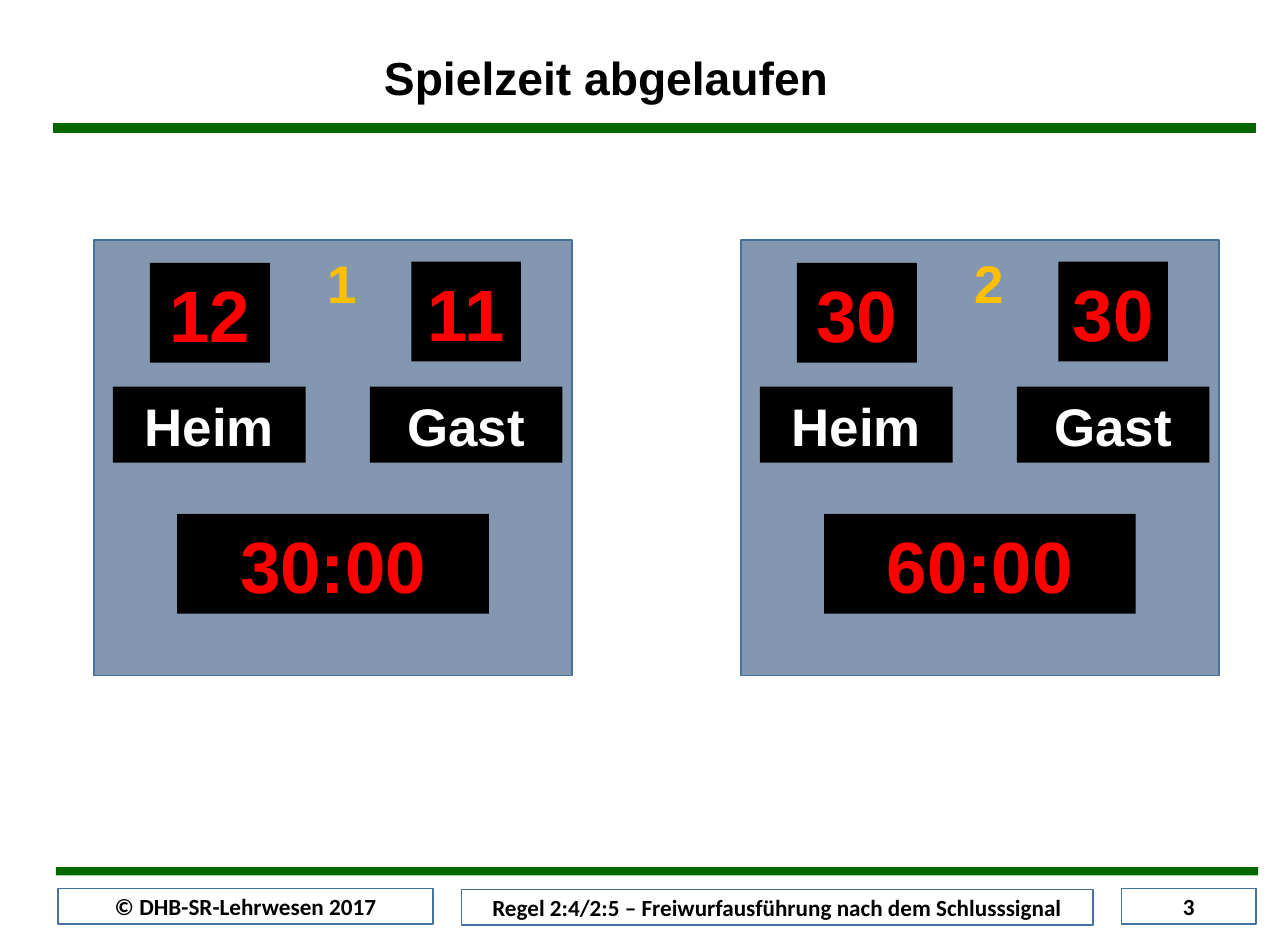
from pptx import Presentation
from pptx.dml.color import RGBColor
from pptx.enum.shapes import MSO_SHAPE as SHAPE
from pptx.enum.text import MSO_ANCHOR as ANCHOR, PP_ALIGN as ALIGN
from pptx.util import Pt

PX = 9144  # EMU per px, 100 px to the inch

GREEN = RGBColor(0x00, 0x66, 0x00)
BLUE = RGBColor(0x43, 0x73, 0x9E)
SLATE = RGBColor(0x84, 0x97, 0xB0)
RED = RGBColor(0xFF, 0x00, 0x00)
AMBER = RGBColor(0xFF, 0xC0, 0x00)
BLACK = RGBColor(0x00, 0x00, 0x00)
WHITE = RGBColor(0xFF, 0xFF, 0xFF)


def px(*lengths):
    return [n * PX for n in lengths]


def add_rect(shapes, box, fill, line=None, width=1):
    sp = shapes.add_shape(SHAPE.RECTANGLE, *px(*box))
    sp.shadow.inherit = False
    sp.fill.solid()
    sp.fill.fore_color.rgb = fill
    if line is None:
        sp.line.fill.background()
    else:
        sp.line.color.rgb = line
        sp.line.width = Pt(width)
    return sp


def set_text(sp, text, size, color, font="Arial", anchor=ANCHOR.BOTTOM):
    tf = sp.text_frame
    tf.word_wrap = True
    tf.vertical_anchor = anchor
    tf.text = text
    p = tf.paragraphs[0]
    p.alignment = ALIGN.CENTER
    f = p.runs[0].font
    f.name, f.size, f.bold = font, Pt(size), True
    f.color.rgb = color
    return p


def add_title(s, text):
    sp = s.shapes.add_textbox(*px(280, 42, 459, 52))
    set_text(sp, text, 28, BLACK).line_spacing = 0.9


def add_footer(s, box, text):
    sp = add_rect(s.shapes, box, WHITE, BLUE)
    set_text(sp, text, 14, BLACK, "Calibri", ANCHOR.MIDDLE)


def add_scoreboard(s, left, period, home, guest, clock):
    shapes = s.shapes.add_group_shape().shapes
    top = 202
    add_rect(shapes, (left, top, 402, 366), SLATE, BLUE)
    # Offsets from the corner of the board
    panels = [
        (70, 230, 262, 84, clock, 44, RED, BLACK),
        (47, 19, 101, 84, home, 44, RED, BLACK),
        (267, 18, 92, 84, guest, 44, RED, BLACK),
        (16, 123, 162, 64, "Heim", 32, WHITE, BLACK),
        (232, 123, 162, 64, "Gast", 32, WHITE, BLACK),
        (163, 3, 92, 64, period, 32, AMBER, SLATE),
    ]
    for dx, dy, w, h, text, size, color, fill in panels:
        sp = add_rect(shapes, (left + dx, top + dy, w, h), fill)
        set_text(sp, text, size, color)


def main():
    prs = Presentation()
    prs.slide_width, prs.slide_height = px(1083, 792)
    s = prs.slides.add_slide(prs.slide_layouts[6])

    # Green rules
    add_rect(s.shapes, (45, 104, 1011, 7), GREEN, GREEN, 0.75)
    add_rect(s.shapes, (47, 729, 1011, 7), GREEN)

    # Footer
    add_footer(s, (49, 747, 315, 30), "© DHB-SR-Lehrwesen 2017")
    add_footer(s, (943, 747, 113, 30), "3")
    add_footer(s, (388, 748, 531, 30),
               "Regel 2:4/2:5 – Freiwurfausführung nach dem Schlusssignal")

    # Title and scoreboards
    add_title(s, "Spielzeit abgelaufen")
    add_scoreboard(s, 79, "1", "12", "11", "30:00")
    add_scoreboard(s, 623, "2", "30", "30", "60:00")

    prs.save("out.pptx")


if __name__ == "__main__":
    main()
